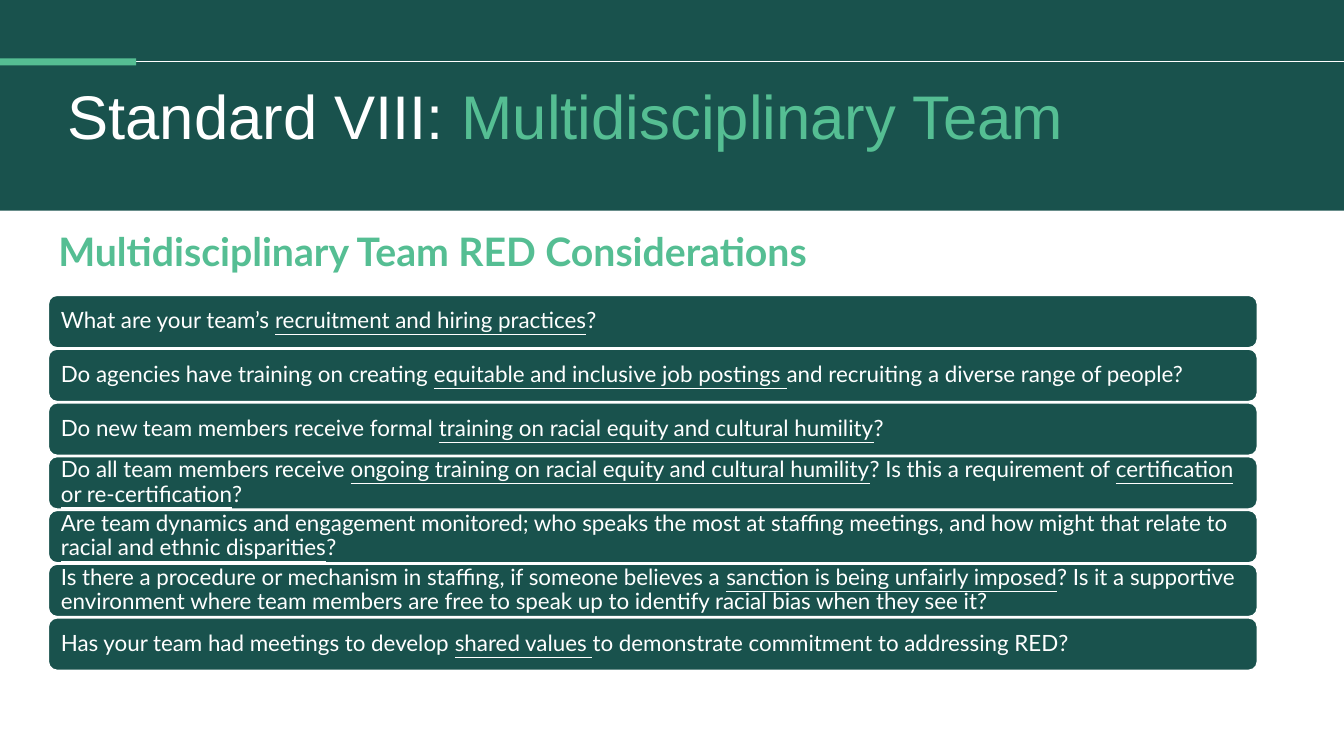
"""Build the Standard VIII: Multidisciplinary Team slide."""
from dataclasses import dataclass

import pptx
import pptx.dml.color
import pptx.enum.shapes
import pptx.enum.text
import pptx.oxml
import pptx.oxml.ns
import pptx.util

Inches = pptx.util.Inches
Pt = pptx.util.Pt
MSO_SHAPE = pptx.enum.shapes.MSO_SHAPE
DARK, GREEN, WHITE = "19524D", "55BE93", "FFFFFF"


@dataclass
class Box:
    left: float
    top: float
    width: float
    height: float


@dataclass
class Run:
    text: str
    color: str = WHITE
    underline: bool = False
    bold: bool = False


QUESTIONS = [
    [Run("What are your team’s "), Run("recruitment and hiring practices", underline=True), Run("?")],
    [Run("Do agencies have training on creating "),
     Run("equitable and inclusive job postings ", underline=True),
     Run("and recruiting a diverse range of people?")],
    [Run("Do new team members receive formal "),
     Run("training on racial equity and cultural humility", underline=True), Run("?")],
    [Run("Do all team members receive "),
     Run("ongoing training on racial equity and cultural humility", underline=True),
     Run("? Is this a requirement of "),
     Run("certification or re-certification", underline=True), Run("?")],
    [Run("Are team dynamics and engagement monitored; who speaks the most at staffing meetings, "
         "and how might that relate to "),
     Run("racial and ethnic disparities", underline=True), Run("?")],
    [Run("Is there a procedure or mechanism in staffing, if someone believes a "),
     Run("sanction is being unfairly imposed", underline=True),
     Run("? Is it a supportive environment where team members are free to speak up "
         "to identify racial bias when they see it?")],
    [Run("Has your team had meetings to develop "), Run("shared values ", underline=True),
     Run("to demonstrate commitment to addressing RED?")],
]


def rgb(value: str) -> pptx.dml.color.RGBColor:
    return pptx.dml.color.RGBColor.from_string(value)


def place(box: Box) -> list[int]:
    return [Inches(v) for v in (box.left, box.top, box.width, box.height)]


def add_block(s, kind, box: Box, fill: str, line: str | None = None):
    sp = s.shapes.add_shape(kind, *place(box))
    sp.shadow.inherit = False
    sp.fill.solid()
    sp.fill.fore_color.rgb = rgb(fill)
    if line:
        sp.line.color.rgb = rgb(line)
        sp.line.width = Pt(1)
    else:
        sp.line.fill.background()
    return sp


def write(sp, runs: list[Run], font: str, size: int, anchor) -> None:
    tf = sp.text_frame
    tf.word_wrap = True
    tf.vertical_anchor = anchor
    p = tf.paragraphs[0]
    p.alignment = pptx.enum.text.PP_ALIGN.LEFT
    p.line_spacing = 0.9
    for run in runs:
        r = p.add_run()
        r.text = run.text
        r.font.name = font
        r.font.size = Pt(size)
        r.font.color.rgb = rgb(run.color)
        r.font.bold = run.bold
        r.font.underline = run.underline


def add_rule(s, y: float, width: float) -> None:
    line = s.shapes.add_connector(pptx.enum.shapes.MSO_CONNECTOR.STRAIGHT,
                                  0, Inches(y), Inches(width), Inches(y))
    line.line.color.rgb = rgb(WHITE)
    line.line.width = Pt(0.5)
    line._element.spPr.append(pptx.oxml.parse_xml(
        f"<a:effectLst {pptx.oxml.ns.nsdecls('a')}/>"))


def main() -> None:
    prs = pptx.Presentation()
    prs.slide_width, prs.slide_height = Inches(13.33), Inches(7.5)
    s = prs.slides.add_slide(prs.slide_layouts[6])
    top, middle = pptx.enum.text.MSO_ANCHOR.TOP, pptx.enum.text.MSO_ANCHOR.MIDDLE

    add_block(s, MSO_SHAPE.RECTANGLE, Box(0, 0, 13.33, 2.09), DARK)
    add_rule(s, 0.61, 13.33)
    add_block(s, MSO_SHAPE.RECTANGLE, Box(0, 0.58, 1.35, 0.07), GREEN)

    title = s.shapes.add_textbox(*place(Box(0.57, 0.81, 11.42, 0.93)))
    write(title, [Run("Standard VIII: "), Run("Multidisciplinary Team", GREEN)], "Arial", 44, top)
    heading = s.shapes.add_textbox(*place(Box(0.48, 2.26, 11.14, 0.6)))
    write(heading, [Run("Multidisciplinary Team RED Considerations", GREEN, bold=True)],
          "Lato", 28, top)

    pitch = (6.13 - 2.93) / (len(QUESTIONS) - 1)
    for i, runs in enumerate(QUESTIONS):
        sp = add_block(s, MSO_SHAPE.ROUNDED_RECTANGLE,
                       Box(0.48, 2.93 + i * pitch, 11.99, 0.52), DARK, WHITE)
        write(sp, runs, "Lato", 16, middle)

    prs.save("out.pptx")


if __name__ == "__main__":
    main()
